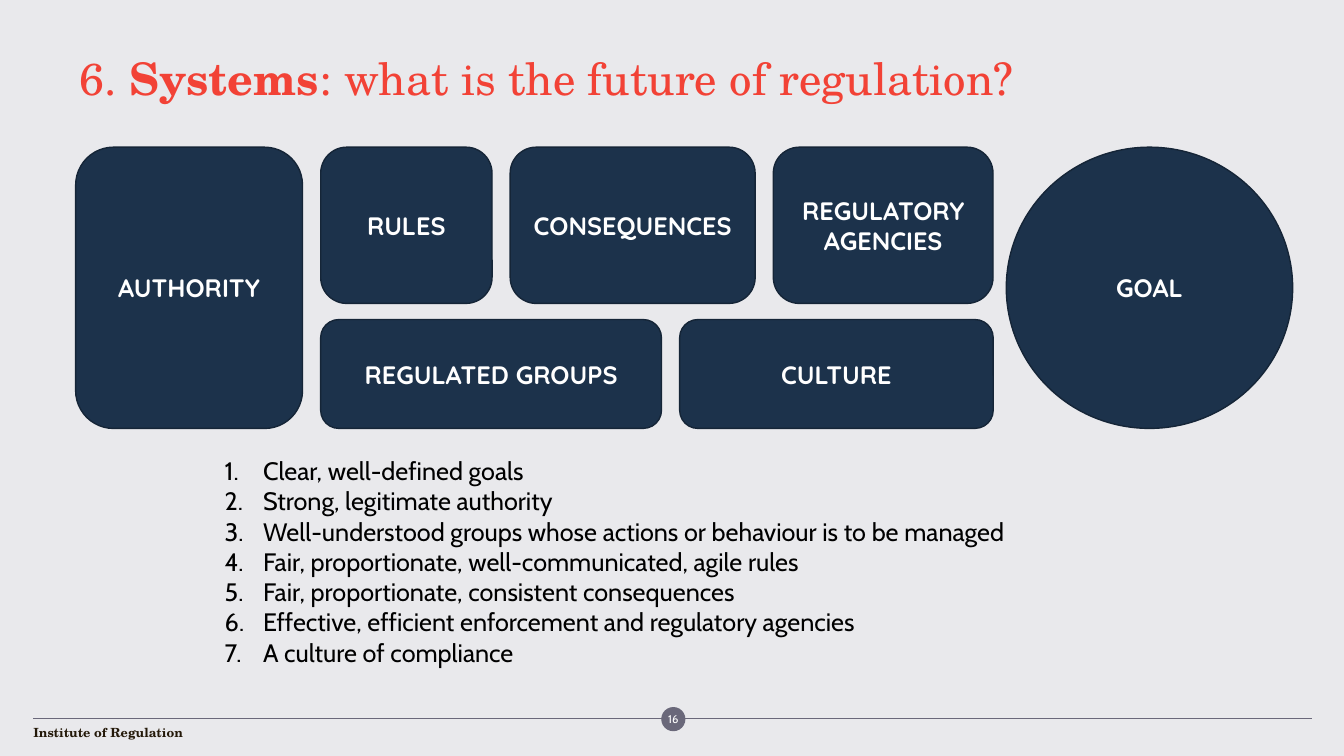
from lxml import etree
from pptx import Presentation
from pptx.dml.color import RGBColor
from pptx.enum.shapes import MSO_CONNECTOR, MSO_SHAPE
from pptx.enum.text import MSO_ANCHOR, MSO_AUTO_SIZE, PP_ALIGN
from pptx.oxml.ns import qn
from pptx.util import Inches, Pt

ROUNDED, OVAL = MSO_SHAPE.ROUNDED_RECTANGLE, MSO_SHAPE.OVAL
STRAIGHT = MSO_CONNECTOR.STRAIGHT
TOP, MIDDLE = MSO_ANCHOR.TOP, MSO_ANCHOR.MIDDLE
LEFT, CENTER = PP_ALIGN.LEFT, PP_ALIGN.CENTER
GROW = MSO_AUTO_SIZE.SHAPE_TO_FIT_TEXT

SLIDE_WIDTH, SLIDE_HEIGHT = Inches(13.33), Inches(7.5)
COLORS = {
    "background": "E9E9EC", "title": "F24236", "block": "1C324B",
    "outline": "152537", "footer": "6A687A", "footer_text": "241909",
    "white": "FFFFFF", "black": "000000",
}
FORMATS = {
    "title": {"name": "TeX Gyre Schola", "size": Pt(32), "color": "title"},
    "block": {"name": "Quicksand", "size": Pt(18), "bold": True, "color": "white"},
    "list": {"name": "Cabin", "size": Pt(18), "color": "black"},
    "footer": {"name": "TeX Gyre Schola", "size": Pt(9), "bold": True,
               "color": "footer_text"},
    "number": {"name": "Cabin", "size": Pt(8), "color": "white"},
}

SYSTEM_LEFT, SYSTEM_TOP = 5.63, 19.47
COLUMN_GAP, ROW_GAP = 1.35, 2.13
AUTHORITY_WIDTH = 16.88
GOAL_LEFT, GOAL_WIDTH = 74.87, 21.31
SYSTEM_ROWS = [
    (20.67, [("RULES", 12.75), ("CONSEQUENCES", 18.23),
             ("REGULATORY AGENCIES", 16.35)]),
    (14.4, [("REGULATED GROUPS", 25.36), ("CULTURE", 23.33)]),
]
FEATURES = [
    "Clear, well-defined goals",
    "Strong, legitimate authority",
    "Well-understood groups whose actions or behaviour is to be managed",
    "Fair, proportionate, well-communicated, agile rules",
    "Fair, proportionate, consistent consequences",
    "Effective, efficient enforcement and regulatory agencies",
    "A culture of compliance",
]


def rgb(color):
    """Return the named colour."""
    return RGBColor.from_string(COLORS[color])


def place(left, top, width, height):
    """Turn percentages of the slide into lengths."""
    return (round(SLIDE_WIDTH * left / 100), round(SLIDE_HEIGHT * top / 100),
            round(SLIDE_WIDTH * width / 100), round(SLIDE_HEIGHT * height / 100))


def add_run(paragraph, text, style, **changes):
    """Add a run in a named format."""
    run = paragraph.add_run()
    run.text = text
    for key, value in {**FORMATS[style], **changes}.items():
        if key == "color":
            run.font.color.rgb = rgb(value)
        else:
            setattr(run.font, key, value)


def add_label(slide, area, runs, style, anchor=TOP, align=LEFT):
    """Add a text box without margins."""
    frame = slide.shapes.add_textbox(*place(*area)).text_frame
    settings = {"word_wrap": True, "vertical_anchor": anchor, "margin_left": 0,
                "margin_right": 0, "margin_top": 0, "margin_bottom": 0}
    for key, value in settings.items():
        setattr(frame, key, value)
    paragraph = frame.paragraphs[0]
    paragraph.alignment = align
    for text, bold in runs:
        add_run(paragraph, text, style, bold=bold)


def add_figure(slide, outline, area, fill):
    """Add a filled shape without shadow."""
    figure = slide.shapes.add_shape(outline, *place(*area))
    figure.shadow.inherit = False
    figure.fill.solid()
    figure.fill.fore_color.rgb = rgb(fill)
    return figure


def add_block(slide, text, area, outline=ROUNDED):
    """Add one labelled part of the regulatory system."""
    block = add_figure(slide, outline, area, "block")
    block.line.color.rgb = rgb("outline")
    block.line.width = Pt(1)
    frame = block.text_frame
    frame.word_wrap = True
    frame.vertical_anchor = MIDDLE
    frame.paragraphs[0].alignment = CENTER
    add_run(frame.paragraphs[0], text, "block")


def add_system(slide):
    """Add the authority, the rows of parts and the goal."""
    height = sum(row_height for row_height, _ in SYSTEM_ROWS) + ROW_GAP
    add_block(slide, "AUTHORITY", (SYSTEM_LEFT, SYSTEM_TOP, AUTHORITY_WIDTH, height))
    top = SYSTEM_TOP
    for row_height, parts in SYSTEM_ROWS:
        left = SYSTEM_LEFT + AUTHORITY_WIDTH + COLUMN_GAP
        for text, width in parts:
            add_block(slide, text, (left, top, width, row_height))
            left += width + COLUMN_GAP
        top += row_height + ROW_GAP
    add_block(slide, "GOAL", (GOAL_LEFT, SYSTEM_TOP, GOAL_WIDTH, height), OVAL)


def add_numbered_list(slide, items, area):
    """Add an automatically numbered list."""
    frame = slide.shapes.add_textbox(*place(*area)).text_frame
    frame.word_wrap = True
    frame.auto_size = GROW
    for index, item in enumerate(items):
        paragraph = frame.add_paragraph() if index else frame.paragraphs[0]
        properties = paragraph._p.get_or_add_pPr()
        properties.set("marL", str(Inches(0.38)))
        properties.set("indent", str(-Inches(0.38)))
        etree.SubElement(properties, qn("a:buFont"), typeface="+mj-lt")
        etree.SubElement(properties, qn("a:buAutoNum"), type="arabicPeriod")
        add_run(paragraph, item, "list")


def add_footer(slide):
    """Add the rule, the institute and the page number."""
    left, top, width, _ = place(2.48, 95.07, 95.12, 0)
    rule = slide.shapes.add_connector(STRAIGHT, left, top, left + width, top)
    rule.line.color.rgb = rgb("footer")
    rule.line.width = Pt(0.75)
    etree.SubElement(rule._element.spPr, qn("a:effectLst"))
    add_label(slide, (2.48, 95.87, 36.6, 2.67),
              [("Institute of Regulation", True)], "footer")
    badge = (49.2, 93.53, 1.8, 3.2)
    add_figure(slide, OVAL, badge, "footer").line.fill.background()
    add_label(slide, badge, [("16", False)], "number", MIDDLE, CENTER)


def main():
    """Build and save the slide."""
    presentation = Presentation()
    presentation.slide_width, presentation.slide_height = SLIDE_WIDTH, SLIDE_HEIGHT
    slide = presentation.slides.add_slide(presentation.slide_layouts[6])
    slide.background.fill.solid()
    slide.background.fill.fore_color.rgb = rgb("background")
    add_footer(slide)
    add_label(slide, (5.93, 6.67, 88.22, 6.67),
              [("6. ", False), ("Systems", True),
               (": what is the future of regulation?", False)], "title")
    add_system(slide)
    add_numbered_list(slide, FEATURES, (15.98, 59.6, 69.99, 29.6))
    presentation.save("out.pptx")


if __name__ == "__main__":
    main()
